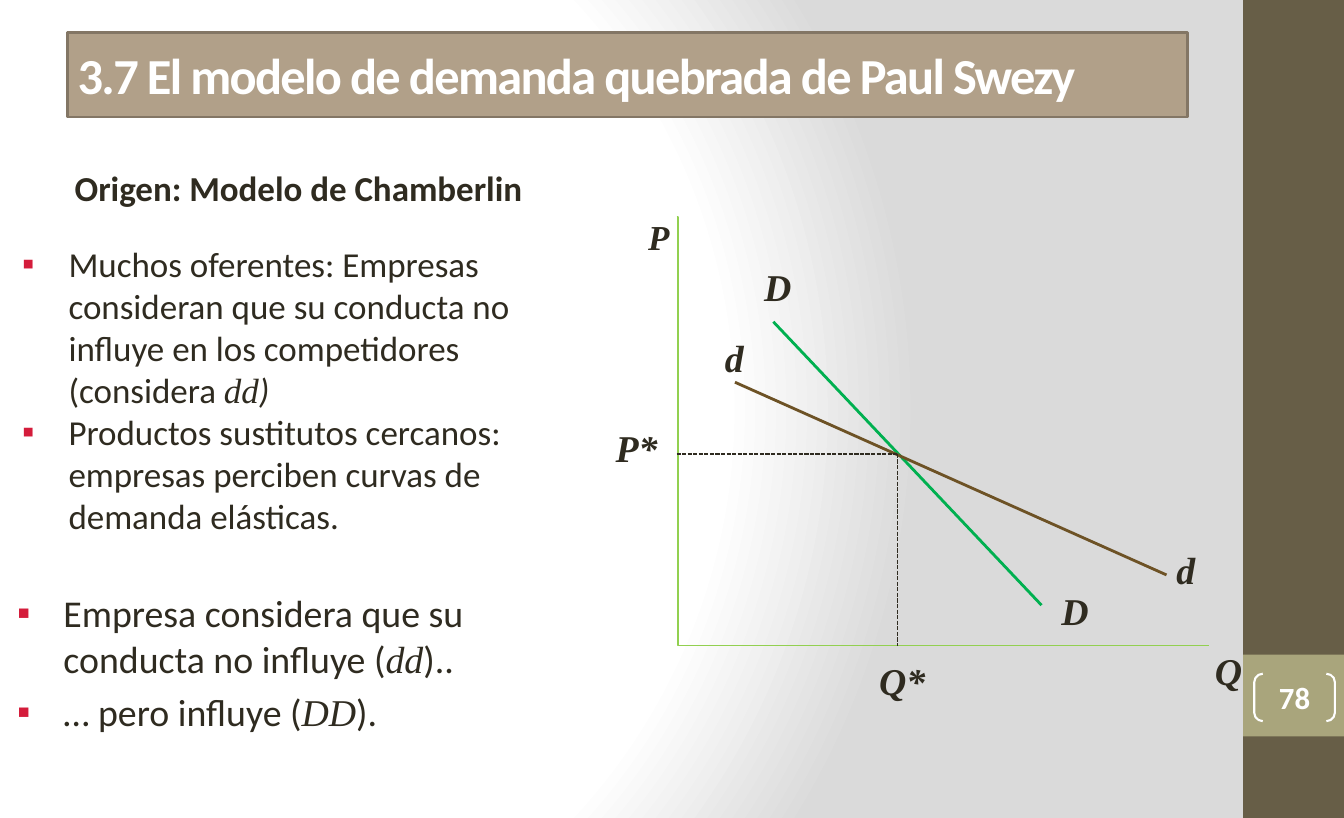
from dataclasses import dataclass

from lxml import etree
from pptx import Presentation
from pptx import util as u
from pptx.dml.color import RGBColor
from pptx.enum import dml, shapes, text
from pptx.oxml import parse_xml
from pptx.oxml.ns import nsdecls, qn

Inches, Pt = u.Inches, u.Pt


@dataclass(frozen=True)
class Theme:
    ink: str = "2F2B20"
    white: str = "FFFFFF"
    backdrop: str = "DADADA"
    sidebar: str = "675E47"
    number_band: str = "A9A57C"
    title_fill: str = "B1A089"
    title_line: str = "837665"
    bullet: str = "D41C3B"
    axis: str = "92D050"
    market_demand: str = "00B050"
    firm_demand: str = "6D5225"
    sans: str = "Calibri"
    serif: str = "Times New Roman"
    title_size: int = 36
    body_size: int = 25
    large_size: int = 27
    number_size: int = 22


THEME = Theme()
rgb = RGBColor.from_string


def add_run(paragraph, words, size, font=THEME.sans, color=THEME.ink, bold=False, italic=False):
    run = paragraph.add_run()
    run.text = words
    run.font.size, run.font.name = Pt(size), font
    run.font.bold, run.font.italic = bold, italic
    run.font.color.rgb = rgb(color)
    return run


def add_text_frame(parent, box, inset_x, inset_y, anchor):
    frame = parent.add_textbox(*map(Inches, box)).text_frame
    frame.word_wrap = True
    frame.vertical_anchor = anchor
    frame.margin_left = frame.margin_right = Inches(inset_x)
    frame.margin_top = frame.margin_bottom = Inches(inset_y)
    return frame


deck = Presentation()
deck.slide_width, deck.slide_height = Inches(13.33), Inches(8.11)
slide = deck.slides.add_slide(deck.slide_layouts[5])

# Background: radial gradient
stops = [(0, THEME.white), (75, THEME.white), (100, THEME.backdrop)]
stop_xml = "".join(
    f'<a:gs pos="{position * 1000}"><a:srgbClr val="{color}"/></a:gs>' for position, color in stops
)
slide.element.cSld.insert(0, parse_xml(
    f'<p:bg {nsdecls("p", "a")}><p:bgPr><a:gradFill rotWithShape="1"><a:gsLst>{stop_xml}</a:gsLst>'
    '<a:path path="circle"><a:fillToRect l="20000" t="50000" r="100000" b="50000"/></a:path>'
    '</a:gradFill><a:effectLst/></p:bgPr></p:bg>'
))

# Sidebar and its number band
for top, height, color in [(0, 8.11, THEME.sidebar), (6.49, 0.81, THEME.number_band)]:
    band = slide.shapes.add_shape(
        shapes.MSO_SHAPE.RECTANGLE, Inches(12.33), Inches(top), Inches(1), Inches(height))
    band.shadow.inherit = False
    band.fill.solid()
    band.fill.fore_color.rgb = rgb(color)
    band.line.fill.background()

# Title
title = slide.shapes.title
title.left, title.top, title.width, title.height = map(Inches, (0.67, 0.32, 11.11, 0.84))
title.fill.solid()
title.fill.fore_color.rgb = rgb(THEME.title_fill)
title.line.color.rgb = rgb(THEME.title_line)
title.line.width = Pt(2)
title.text_frame.auto_size = text.MSO_AUTO_SIZE.NONE
title.text_frame.vertical_anchor = text.MSO_ANCHOR.MIDDLE
heading = title.text_frame.paragraphs[0]
heading.alignment = text.PP_ALIGN.LEFT
heading_run = add_run(heading, "3.7 El modelo de demanda quebrada de Paul Swezy",
                      THEME.title_size, color=THEME.white, bold=True)
heading_run.font._element.set("spc", "-120")

# Subtitle
origin = add_text_frame(slide.shapes, (0.62, 1.54, 6.88, 0.64), 0.12, 0.06, text.MSO_ANCHOR.MIDDLE)
add_run(origin.paragraphs[0], "Origen: Modelo de Chamberlin", THEME.body_size, bold=True)

# Bulleted lists: each run is (words, font, italic)
assumptions = [
    [("Muchos oferentes: Empresas consideran que su conducta no influye en los competidores "
      "(considera ", THEME.sans, False), ("dd", THEME.serif, True), (")", THEME.sans, True)],
    [("Productos sustitutos cercanos: empresas perciben curvas de demanda elásticas.",
      THEME.sans, False)],
]
consequences = [
    [("Empresa considera que su conducta no influye (", THEME.sans, False),
     ("dd", THEME.serif, True), (")..", THEME.sans, False)],
    [("… pero influye (", THEME.sans, False),
     ("DD", THEME.serif, True), (").", THEME.sans, False)],
]
for box, size, space_before, items in [
    ((0.1, 2.34, 5.3, 3.07), THEME.body_size, 0, assumptions),
    ((0.05, 5.79, 4.9, 1.58), THEME.large_size, 5.4, consequences),
]:
    frame = add_text_frame(slide.shapes, box, 0.12, 0.06, text.MSO_ANCHOR.TOP)
    for index, item in enumerate(items):
        paragraph = frame.add_paragraph() if index else frame.paragraphs[0]
        paragraph.space_before = Pt(space_before)
        properties = paragraph._p.get_or_add_pPr()
        properties.set("marL", str(Inches(0.46)))
        properties.set("indent", str(-Inches(0.46)))
        bullet_color = etree.SubElement(properties, qn("a:buClr"))
        etree.SubElement(bullet_color, qn("a:srgbClr"), val=THEME.bullet)
        etree.SubElement(properties, qn("a:buFont"), typeface="Arial")
        etree.SubElement(properties, qn("a:buChar"), char="▪")
        for words, font, italic in item:
            add_run(paragraph, words, size, font, italic=italic)

# Demand diagram: axes, curves and equilibrium guides
diagram = slide.shapes.add_group_shape().shapes
straight, elbow = shapes.MSO_CONNECTOR.STRAIGHT, shapes.MSO_CONNECTOR.ELBOW
for kind, ends, color, width, dashed in [
    (elbow, (6.71, 2.15, 11.99, 6.4), THEME.axis, 1, False),
    (straight, (7.67, 3.19, 10.33, 6), THEME.market_demand, 2, False),
    (straight, (7.29, 3.79, 11.57, 5.7), THEME.firm_demand, 2, False),
    (straight, (6.71, 4.5, 8.9, 4.5), THEME.ink, 1, True),
    (straight, (8.9, 4.5, 8.9, 6.4), THEME.ink, 1, True),
]:
    curve = diagram.add_connector(kind, *map(Inches, ends))
    curve.line.color.rgb = rgb(color)
    curve.line.width = Pt(width)
    if dashed:
        curve.line.dash_style = dml.MSO_LINE.SQUARE_DOT
    curve_properties = curve._element.spPr
    etree.SubElement(curve_properties, qn("a:effectLst"))
    if kind == elbow:
        geometry = curve_properties.find(qn("a:prstGeom"))
        adjustments = geometry.find(qn("a:avLst"))
        if adjustments is None:
            adjustments = etree.SubElement(geometry, qn("a:avLst"))
        etree.SubElement(adjustments, qn("a:gd"), name="adj1", fmla="val 300")

# Diagram labels
left, right = text.PP_ALIGN.LEFT, text.PP_ALIGN.RIGHT
for label, x, y, width, size, alignment in [
    ("P", 6.33, 2.09, 0.38, THEME.body_size, left),
    ("P*", 5.95, 4.19, 0.67, THEME.large_size, right),
    ("Q*", 8.62, 6.5, 0.67, THEME.large_size, left),
    ("Q", 11.95, 6.4, 0.67, THEME.large_size, left),
    ("D", 7.48, 2.59, 0.38, THEME.large_size, left),
    ("D", 10.43, 5.8, 0.57, THEME.large_size, left),
    ("d", 7.09, 3.29, 0.38, THEME.large_size, left),
    ("d", 11.57, 5.4, 0.57, THEME.large_size, left),
]:
    frame = add_text_frame(diagram, (x, y, width, 0.5), 0.1, 0.05, text.MSO_ANCHOR.MIDDLE)
    frame.paragraphs[0].alignment = alignment
    add_run(frame.paragraphs[0], label, size, THEME.serif, bold=True, italic=True)

# Slide number in brackets
number = slide.shapes.add_shape(
    shapes.MSO_SHAPE.DOUBLE_BRACKET, Inches(12.44), Inches(6.68), Inches(0.8), Inches(0.47))
number.adjustments[0] = 0.18
number.shadow.inherit = False
number.fill.background()
number.line.color.rgb = rgb(THEME.white)
number.line.width = Pt(1.5)
frame = number.text_frame
frame.margin_left = frame.margin_right = frame.margin_top = frame.margin_bottom = 0
frame.vertical_anchor = text.MSO_ANCHOR.MIDDLE
frame.paragraphs[0].alignment = text.PP_ALIGN.CENTER
add_run(frame.paragraphs[0], "78", THEME.number_size, color=THEME.white, bold=True)

deck.save("out.pptx")
